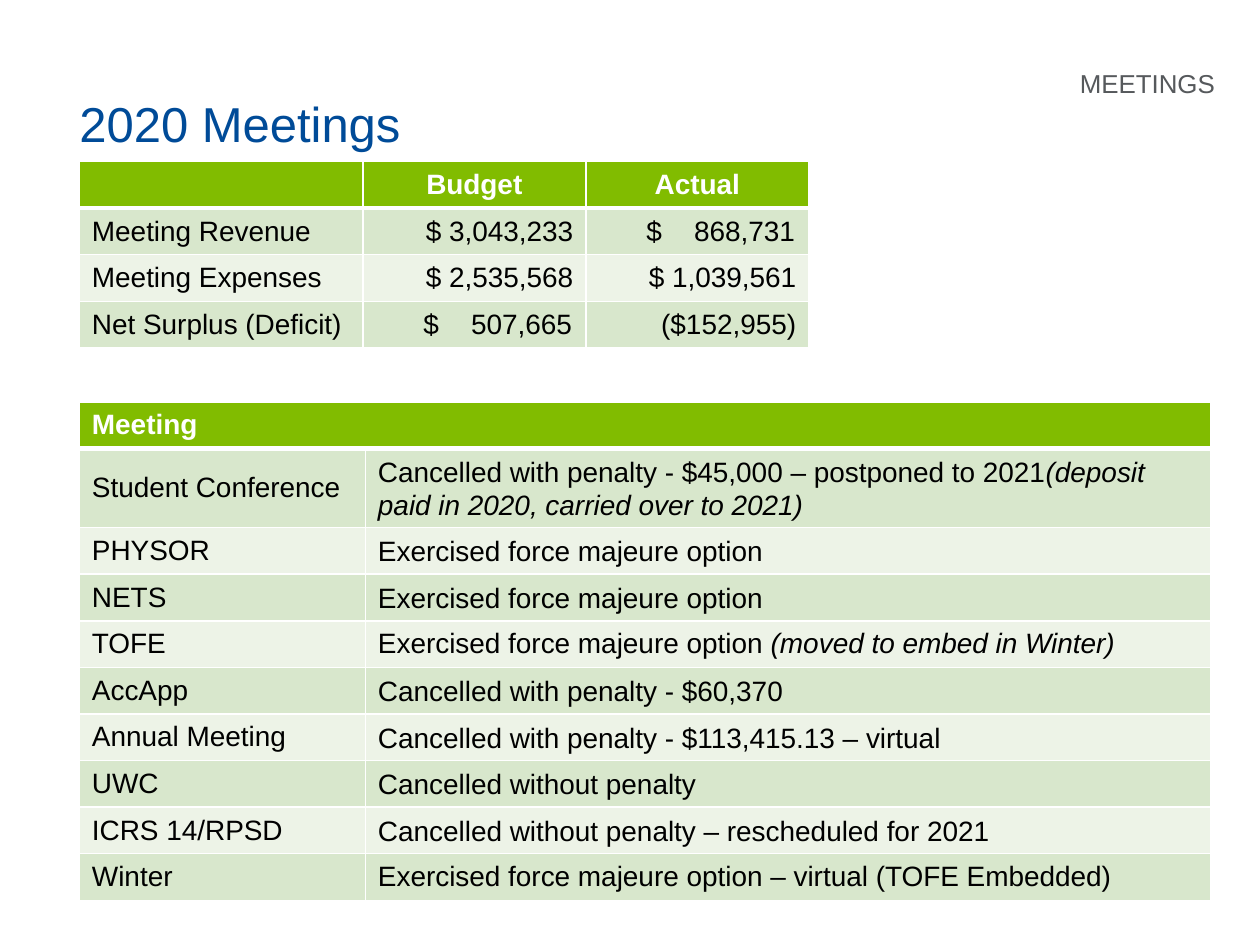
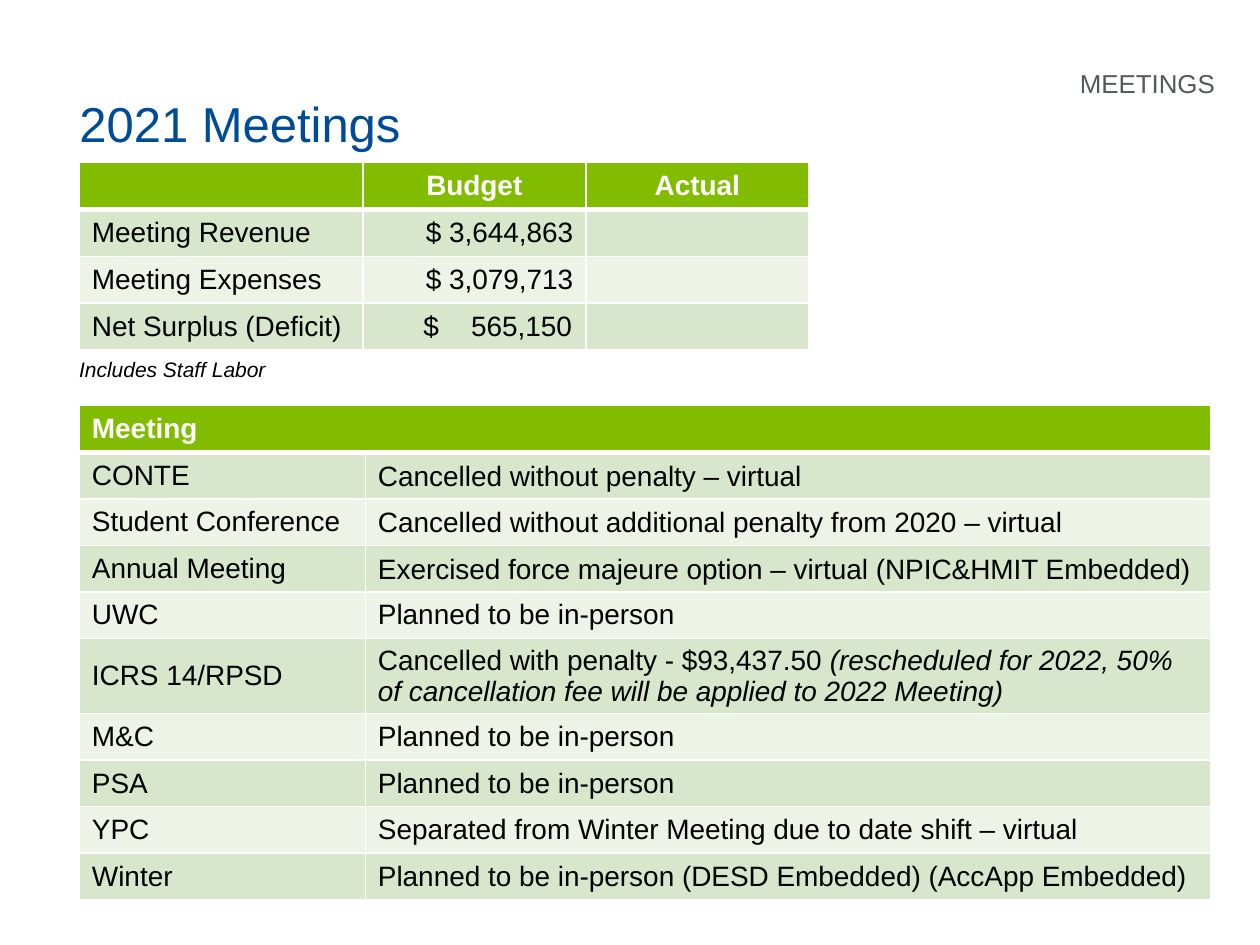
from lxml.etree import SubElement
from pptx import Presentation
from pptx.dml.color import RGBColor
from pptx.enum.text import MSO_ANCHOR, MSO_AUTO_SIZE, PP_ALIGN
from pptx.oxml.ns import qn
from pptx.util import Inches, Pt

# Shared style
FONT = "Arial"
COLORS = {
    "blue": "004B98",
    "gray": "56595C",
    "green": "81BC00",
    "mint": "D8E7CC",
    "pale": "EDF3E7",
    "white": "FFFFFF",
    "black": "000000",
}
LEFT = 0.63
ROW = 0.37
BODY = 16
PAD = 0.48  # left margin of a cell with a tabbed amount
STOP = 1.18  # right tab that lines up the digits

# Content: (meeting, status, aside)
PLANS_2020 = [
    ("Student Conference", "Cancelled with penalty - $45,000 – postponed to 2021",
     "(deposit paid in 2020, carried over to 2021)"),
    ("PHYSOR", "Exercised force majeure option", ""),
    ("NETS", "Exercised force majeure option", ""),
    ("TOFE", "Exercised force majeure option ", "(moved to embed in Winter)"),
    ("AccApp", "Cancelled with penalty - $60,370", ""),
    ("Annual Meeting", "Cancelled with penalty - $113,415.13 – virtual", ""),
    ("UWC", "Cancelled without penalty", ""),
    ("ICRS 14/RPSD", "Cancelled without penalty – rescheduled for 2021", ""),
    ("Winter", "Exercised force majeure option – virtual (TOFE Embedded)", ""),
]
PLANS_2021 = [
    ("CONTE", "Cancelled without penalty – virtual", ""),
    ("Student Conference", "Cancelled without additional penalty from 2020 – virtual", ""),
    ("Annual Meeting", "Exercised force majeure option – virtual (NPIC&HMIT Embedded)", ""),
    ("UWC", "Planned to be in-person", ""),
    ("ICRS 14/RPSD", "Cancelled with penalty - $93,437.50 ",
     "(rescheduled for 2022, 50% of cancellation fee will be applied to 2022 Meeting)"),
    ("M&C", "Planned to be in-person", ""),
    ("PSA", "Planned to be in-person", ""),
    ("YPC", "Separated from Winter Meeting due to date shift – virtual", ""),
    ("Winter", "Planned to be in-person (DESD Embedded) (AccApp Embedded)", ""),
]
SUMS = ["Meeting Revenue", "Meeting Expenses", "Net Surplus (Deficit)"]
SUMS_2020 = [("$ 3,043,233", "$ 868,731"), ("$ 2,535,568", "$ 1,039,561"),
             ("$ 507,665", "($152,955)")]
SUMS_2021 = [("$ 3,644,863", ""), ("$ 3,079,713", ""), ("$ 565,150", "")]


def paint(run, size, color, bold=False, slant=False):
    font = run.font
    font.name, font.size = FONT, Pt(size)
    font.bold, font.italic = bold, slant
    font.color.rgb = RGBColor.from_string(COLORS[color])


def write(shape, text, size, color, align=PP_ALIGN.LEFT, slant=False, wrap=False):
    frame = shape.text_frame
    frame.word_wrap = wrap
    frame.auto_size = MSO_AUTO_SIZE.NONE
    frame.vertical_anchor = MSO_ANCHOR.TOP
    frame.text = text
    para = frame.paragraphs[0]
    para.alignment = align
    paint(para.runs[0], size, color, slant=slant)


def add_title(slide, text):
    title = slide.shapes.title
    title.left, title.top = Inches(0.53), Inches(0.69)
    title.width, title.height = Inches(2.78), Inches(0.57)
    write(title, text, 28, "blue")


def add_label(slide, box, text, size, color, **style):
    label = slide.shapes.add_textbox(*[Inches(n) for n in box])
    write(label, text, size, color, **style)


def edge(cell, side, width):
    line = SubElement(cell._tc.get_or_add_tcPr(), qn(f"a:ln{side}"), w=str(Pt(width)))
    fill = SubElement(line, qn("a:solidFill"))
    SubElement(fill, qn("a:srgbClr"), val=COLORS["white"])


def fill_cell(cell, row, text, aside="", align=PP_ALIGN.LEFT, space=None):
    # White grid, with a thick rule under the heading row
    widths = {"L": 1, "R": 1, "T": 3 if row == 1 else 1, "B": 1 if row else 3}
    for side, width in widths.items():
        edge(cell, side, width)
    cell.fill.solid()
    shade = "green" if row == 0 else ("pale", "mint")[row % 2]
    cell.fill.fore_color.rgb = RGBColor.from_string(COLORS[shade])
    cell.vertical_anchor = MSO_ANCHOR.MIDDLE
    para = cell.text_frame.paragraphs[0]
    para.text = text
    para.alignment = align
    if space:
        para.line_spacing = space
    if aside:
        para.add_run().text = aside
    for place, run in enumerate(para.runs):
        paint(run, BODY, "black" if row else "white", bold=row == 0, slant=place > 0)
    if not text:
        SubElement(para._p, qn("a:endParaRPr"), sz=str(BODY * 100))


def fill_sum(cell, row, text):
    # Short amounts keep their dollar sign in line with the long ones
    short = text.startswith("$") and text.count(",") == 1
    if not short:
        fill_cell(cell, row, text, align=PP_ALIGN.RIGHT)
        return
    cell.margin_left = Inches(PAD)
    props = cell.text_frame.paragraphs[0]._p.get_or_add_pPr()
    tabs = SubElement(props, qn("a:tabLst"))
    SubElement(tabs, qn("a:tab"), pos=str(Inches(STOP)), algn="r")
    fill_cell(cell, row, text.replace(" ", "\t"))


def add_grid(slide, top, count, widths, head):
    frame = slide.shapes.add_table(count, len(widths), Inches(LEFT), Inches(top),
                                   Inches(sum(widths)), Inches(ROW * count))
    grid = frame.table
    for col, width in zip(grid.columns, widths):
        col.width = Inches(width)
    for row in grid.rows:
        row.height = Inches(ROW)
    grid.rows[0].height = Inches(head)
    return grid


def add_sums(slide, top, sums):
    grid = add_grid(slide, top, len(sums) + 1, [2.25, 1.77, 1.77], 0.36)
    for col, text in enumerate(["", "Budget", "Actual"]):
        fill_cell(grid.cell(0, col), 0, text, align=PP_ALIGN.CENTER)
    for row, (name, pair) in enumerate(zip(SUMS, sums), 1):
        fill_cell(grid.cell(row, 0), row, name)
        for col, text in enumerate(pair, 1):
            fill_sum(grid.cell(row, col), row, text)


def add_plans(slide, top, plans, loose):
    grid = add_grid(slide, top, len(plans) + 1, [2.27, 6.71], 0.37)
    for col, text in enumerate(["Meeting", ""]):
        fill_cell(grid.cell(0, col), 0, text)
    grid.cell(0, 0).merge(grid.cell(0, 1))
    for row, (name, text, aside) in enumerate(plans, 1):
        fill_cell(grid.cell(row, 0), row, name)
        fill_cell(grid.cell(row, 1), row, text, aside,
                  space=1.07 if row in loose else None)


def add_year(deck, year, sums, plans, tops, loose):
    slide = deck.slides.add_slide(deck.slide_layouts[5])
    add_title(slide, f"{year} Meetings")
    add_label(slide, (1.12, 0.49, 8.62, 0.31), "MEETINGS", 14.8, "gray",
              align=PP_ALIGN.RIGHT, wrap=True)
    add_sums(slide, tops[0], sums)
    add_plans(slide, tops[1], plans, loose)
    return slide


def main():
    deck = Presentation()
    deck.slide_width, deck.slide_height = Inches(10), Inches(7.5)

    # Results of 2020
    add_year(deck, 2020, SUMS_2020, PLANS_2020, (1.28, 3.19), {1, 2, 3, 5, 6, 7, 8})

    # Plans for 2021
    slide = add_year(deck, 2021, SUMS_2021, PLANS_2021, (1.29, 3.22), {1, 2, 3})
    add_label(slide, (0.53, 2.78, 1.7, 0.3), "Includes Staff Labor", 12, "black",
              slant=True)

    deck.save("out.pptx")


if __name__ == "__main__":
    main()
